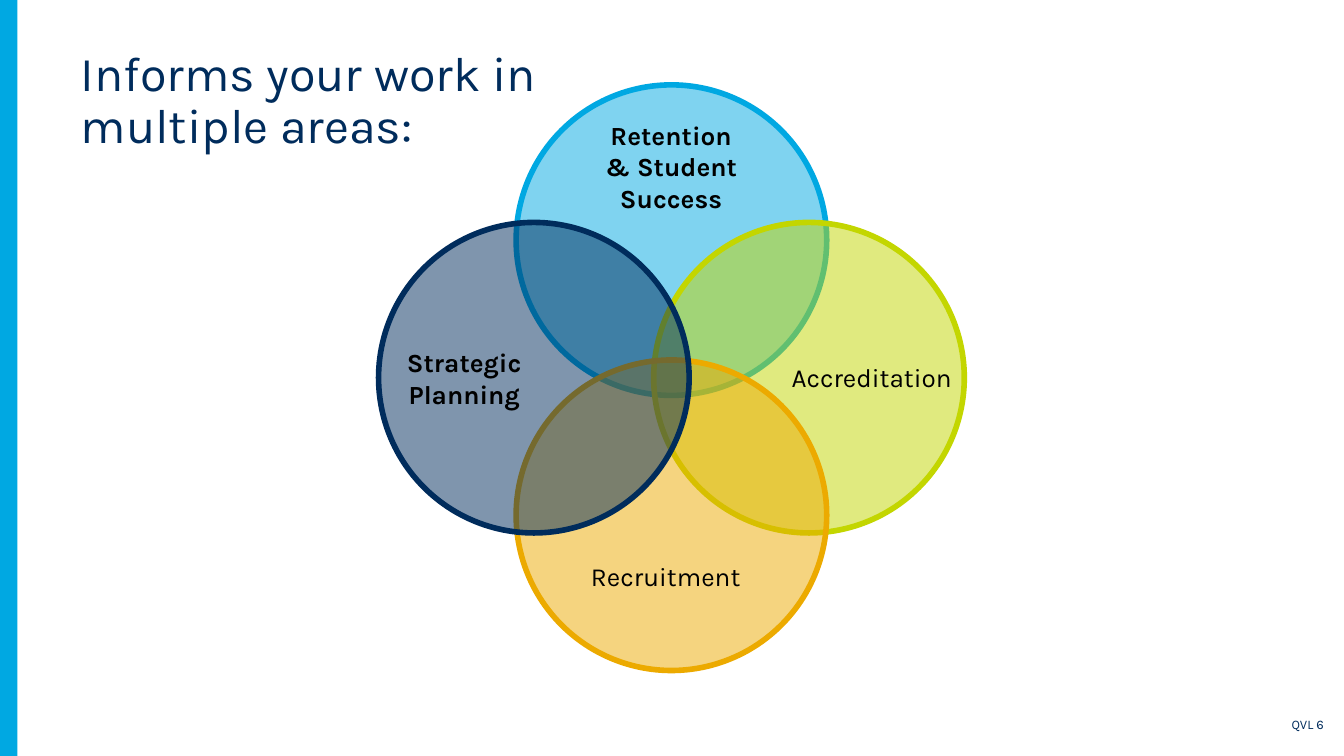
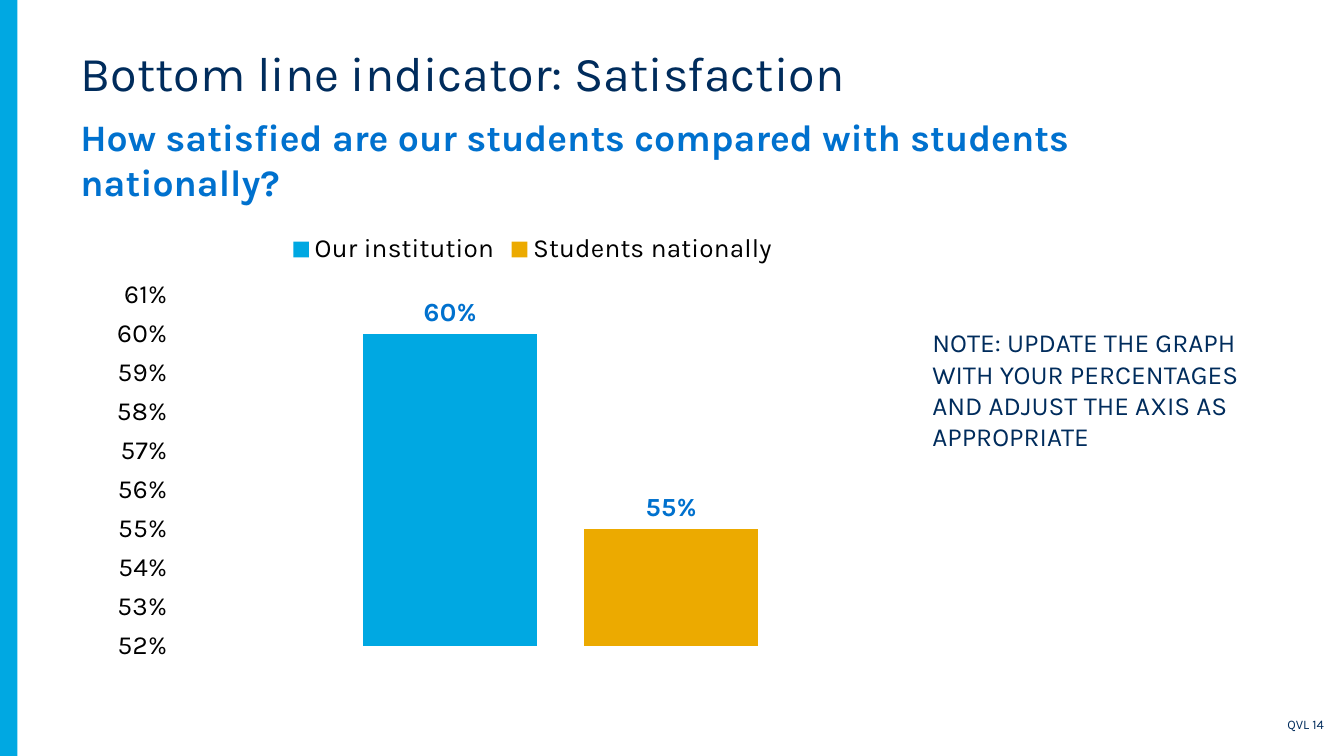
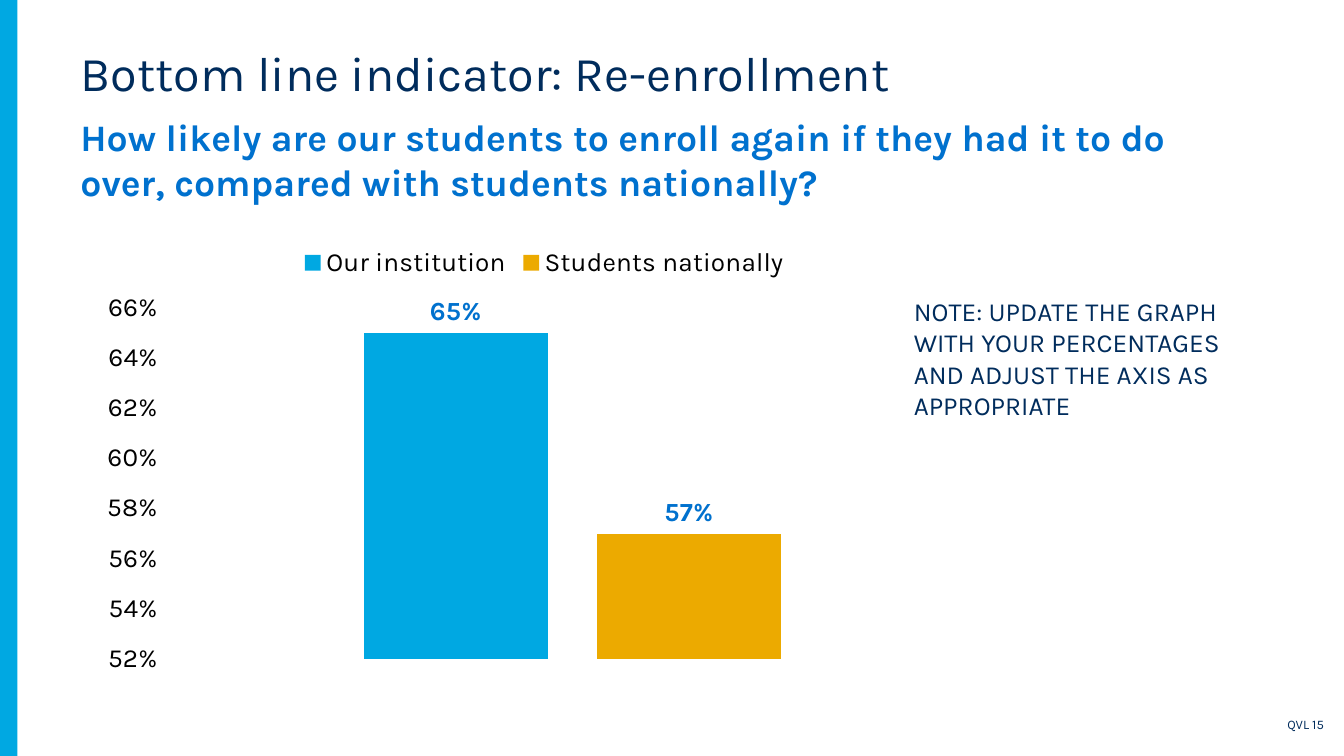
from lxml.etree import SubElement
from pptx import Presentation
from pptx.chart.data import CategoryChartData
from pptx.dml.color import RGBColor
from pptx.enum.chart import XL_CHART_TYPE, XL_LABEL_POSITION, XL_LEGEND_POSITION, XL_TICK_MARK
from pptx.enum.shapes import MSO_SHAPE
from pptx.enum.text import MSO_ANCHOR, MSO_AUTO_SIZE, PP_ALIGN
from pptx.oxml.ns import qn
from pptx.util import Cm, Pt

COLORS = {
    "navy": "002C5C",
    "sky": "00A8E2",
    "blue": "0071CE",
    "lime": "C3D600",
    "amber": "ECAA00",
    "black": "000000",
}
FONT = "Karla"
BODY_SIZE = 14
SLIDE_WIDTH, SLIDE_HEIGHT = 25.4, 14.29
TEXT_LEFT, TEXT_WIDTH = 1.27, 22
NOTE = "NOTE: UPDATE THE GRAPH WITH YOUR PERCENTAGES AND ADJUST THE AXIS AS APPROPRIATE"
FOOTER_NAME = "QVL"


def color(name):
    return RGBColor.from_string(COLORS[name])


class Deck:
    """Holds the shared style and the slide being filled; lengths are in centimetres."""

    def __init__(self):
        self.presentation = Presentation()
        self.presentation.slide_width = Cm(SLIDE_WIDTH)
        self.presentation.slide_height = Cm(SLIDE_HEIGHT)
        self.slide = None

    def style_font(self, font, size=BODY_SIZE, color_name="black", bold=False):
        font.name = FONT
        font.size = Pt(size)
        font.bold = bold
        font.color.rgb = color(color_name)

    def add_slide(self, title, number):
        self.slide = self.presentation.slides.add_slide(self.presentation.slide_layouts[5])
        self.text(f"{FOOTER_NAME} {number}", (23.39, 13.41, 1.88, 0.56), size=7,
                  color_name="navy", alignment=PP_ALIGN.RIGHT)
        self.shape(self.slide.shapes, MSO_SHAPE.RECTANGLE, (0, 0, 0.33, SLIDE_HEIGHT), "sky")
        self.title(title)

    def title(self, text):
        title = self.slide.shapes.title
        title.left, title.top = Cm(TEXT_LEFT), Cm(0.81)
        title.width, title.height = Cm(TEXT_WIDTH), Cm(1.14)
        frame = title.text_frame
        frame.text = text
        frame.word_wrap = True
        frame.auto_size = MSO_AUTO_SIZE.NONE
        frame.vertical_anchor = MSO_ANCHOR.TOP
        paragraph = frame.paragraphs[0]
        paragraph.alignment = PP_ALIGN.LEFT
        paragraph.line_spacing = 0.9
        self.style_font(paragraph.font, 26, "navy")

    def subtitle(self, text):
        self.text(text, (TEXT_LEFT, 2.03, TEXT_WIDTH, 1.14), size=20, color_name="blue", bold=True)

    def text(self, text, box, size=BODY_SIZE, color_name="black", bold=False,
             alignment=PP_ALIGN.LEFT):
        frame = self.slide.shapes.add_textbox(*map(Cm, box)).text_frame
        frame.word_wrap = True
        frame.text = text
        for paragraph in frame.paragraphs:
            paragraph.alignment = alignment
            self.style_font(paragraph.font, size, color_name, bold)

    def shape(self, shapes, kind, box, color_name):
        shape = shapes.add_shape(kind, *map(Cm, box))
        shape.shadow.inherit = False
        shape.fill.solid()
        shape.fill.fore_color.rgb = color(color_name)
        shape.line.fill.background()
        return shape

    def circle(self, shapes, box, color_name):
        """Add a half-transparent circle with a solid outline."""
        circle = self.shape(shapes, MSO_SHAPE.OVAL, box, color_name)
        fill_color = circle.element.spPr.find(qn("a:solidFill")).find(qn("a:srgbClr"))
        SubElement(fill_color, qn("a:alpha"), val="50000")
        circle.line.color.rgb = color(color_name)
        circle.line.width = Pt(3)

    def column_chart(self, box, institution, national, axis_range, axis_step):
        data = CategoryChartData(number_format="0%")
        data.categories = ["1"]
        data.add_series("Our institution", [institution])
        data.add_series("Students nationally", [national])
        chart = self.slide.shapes.add_chart(
            XL_CHART_TYPE.COLUMN_CLUSTERED, *map(Cm, box), data).chart
        self.style_font(chart.font, 10)
        chart.has_title = False
        chart.has_legend = True
        chart.legend.position = XL_LEGEND_POSITION.TOP
        chart.legend.include_in_layout = False
        self.style_font(chart.legend.font)

        chart.category_axis.visible = False
        axis = chart.value_axis
        axis.has_major_gridlines = False
        axis.minimum_scale, axis.maximum_scale = axis_range
        axis.major_unit = axis_step
        axis.major_tick_mark = axis.minor_tick_mark = XL_TICK_MARK.NONE
        axis.format.line.fill.background()
        axis.tick_labels.number_format = "0%"
        axis.tick_labels.number_format_is_linked = False
        self.style_font(axis.tick_labels.font)

        plot = chart.plots[0]
        plot.gap_width, plot.overlap = 219, -27
        plot.vary_by_categories = False
        for series, color_name in zip(plot.series, ("sky", "amber")):
            series.format.fill.solid()
            series.format.fill.fore_color.rgb = color(color_name)
            labels = series.data_labels
            labels.show_value = True
            labels.position = XL_LABEL_POSITION.OUTSIDE_END
            labels.number_format = "0%"
            labels.number_format_is_linked = False
            self.style_font(labels.font, color_name="blue", bold=True)


def add_areas_slide(deck):
    deck.add_slide("Informs your work in\vmultiple areas:", 6)
    center_x, center_y, offset, diameter = 12.69, 7.14, 2.6, 5.87
    circles = deck.slide.shapes.add_group_shape().shapes
    for step_x, step_y, color_name in (
        (0, -1, "sky"), (1, 0, "lime"), (0, 1, "amber"), (-1, 0, "navy"),
    ):
        left = center_x + step_x * offset - diameter / 2
        top = center_y + step_y * offset - diameter / 2
        deck.circle(circles, (left, top, diameter, diameter), color_name)
    deck.text("Recruitment", (10.92, 10.46, 3.53, 0.86))
    deck.text("Accreditation", (14.71, 6.71, 4.06, 0.86))
    for label, box in (
        ("Strategic Planning", (6.83, 6.43, 3.89, 1.45)),
        ("Retention\n& Student Success", (10.92, 2.13, 3.53, 2.06)),
    ):
        deck.text(label, box, bold=True, alignment=PP_ALIGN.CENTER)


def add_indicator_slide(deck, number, indicator, question, note_box, **chart):
    deck.add_slide(f"Bottom line indicator: {indicator}", number)
    deck.subtitle(question)
    deck.column_chart(**chart)
    deck.text(NOTE, note_box, color_name="navy")


def main():
    deck = Deck()
    add_areas_slide(deck)
    add_indicator_slide(
        deck, 14, "Satisfaction",
        "How satisfied are our students compared with students nationally?",
        note_box=(17.37, 6.05, 7.24, 2.64), box=(1.88, 4.14, 16.38, 8.53),
        institution=0.6, national=0.55, axis_range=(0.52, 0.61), axis_step=0.01)
    add_indicator_slide(
        deck, 15, "Re-enrollment",
        "How likely are our students to enroll again if they had it to do over, "
        "compared with students nationally?",
        note_box=(17.02, 5.46, 7.09, 2.64), box=(1.68, 4.39, 17.22, 8.53),
        institution=0.65, national=0.57, axis_range=(0.52, 0.66), axis_step=0.02)
    deck.presentation.save("out.pptx")


if __name__ == "__main__":
    main()
